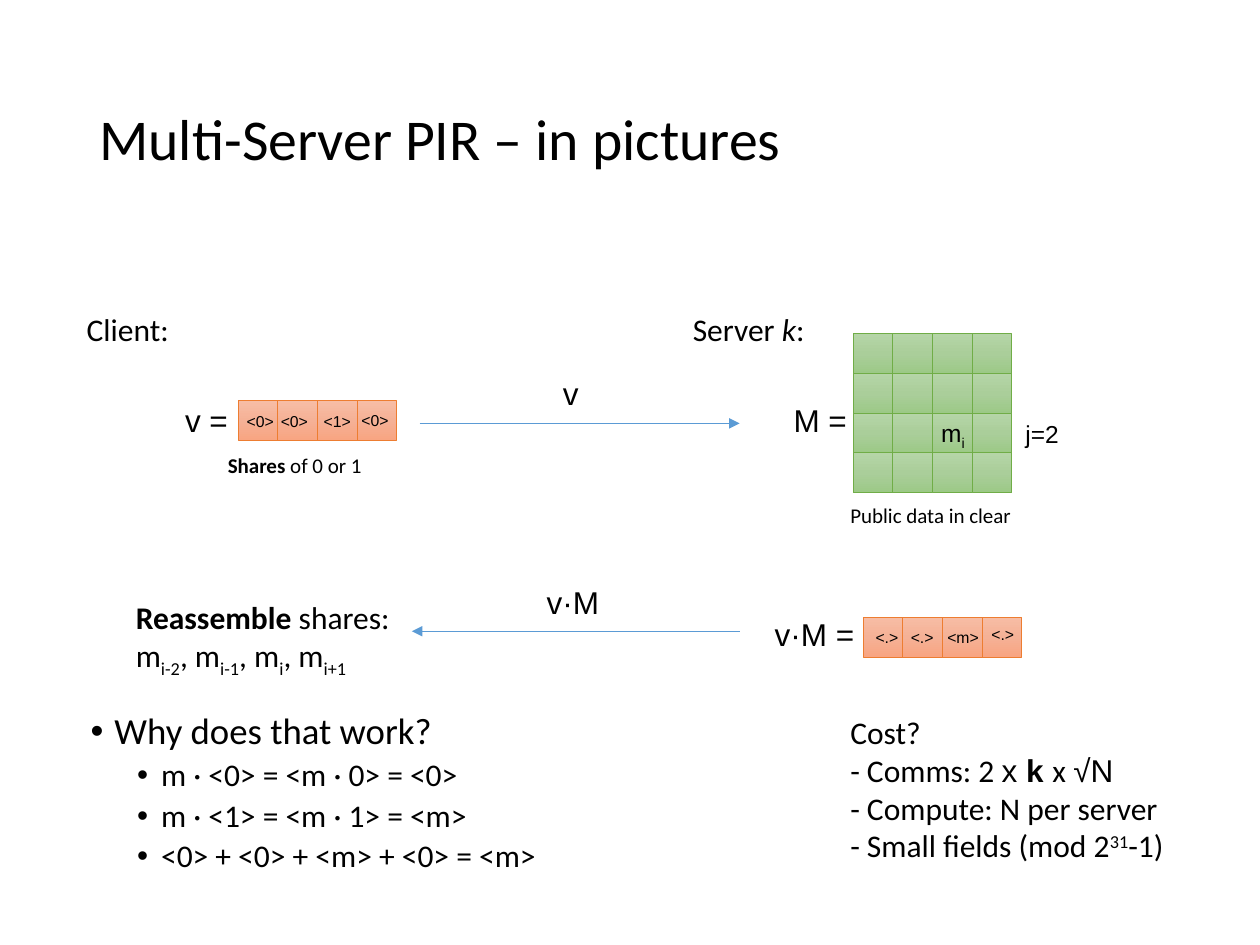
from copy import deepcopy
from dataclasses import dataclass

from pptx import Presentation
from pptx.dml.color import RGBColor
from pptx.enum.shapes import MSO_CONNECTOR as Connector, MSO_SHAPE as Shape
from pptx.enum.text import MSO_ANCHOR as Anchor, MSO_AUTO_SIZE as AutoSize
from pptx.oxml.ns import qn
from pptx.oxml.xmlchemy import OxmlElement as Element
from pptx.util import Inches, Pt


@dataclass(frozen=True)
class Theme:
    text: str = "000000"
    arrow: str = "5B9BD5"
    green: tuple = ("B5D5A7", "AACE9A", "9CC987")
    green_line: str = "70AD47"
    orange: tuple = ("F7BDA5", "F5B196", "F8A582")
    orange_line: str = "ED7D31"
    body_font: str = "Calibri"
    math_font: str = "Arial"
    title: float = 33
    heading: float = 21
    normal: float = 18
    entry: float = 14
    caption: float = 12
    share: float = 9
    line: float = 0.5
    cell: float = 0.315


SUB, SUPER = {"baseline": -25}, {"baseline": 30}
BOLD, ITALIC = {"bold": True}, {"italic": True}


class SlideBuilder:
    def __init__(self, page, theme):
        self.page = page
        self.theme = theme

    def style(self, span, size, font, bold=None, italic=None, baseline=None):
        span.font.size = Pt(size)
        span.font.name = font
        span.font.color.rgb = RGBColor.from_string(self.theme.text)
        span.font.bold = bold
        span.font.italic = italic
        if baseline:
            span.font._element.set("baseline", str(baseline * 1000))

    def text(self, left, top, width, height, lines, size=None, font=None,
             wrap=False, grow=True):
        """Each line is a string or a list of strings and (string, style) pairs."""
        box = self.page.shapes.add_textbox(
            Inches(left), Inches(top), Inches(width), Inches(height))
        frame = box.text_frame
        frame.word_wrap = wrap
        frame.auto_size = AutoSize.SHAPE_TO_FIT_TEXT if grow else AutoSize.NONE
        for number, line in enumerate(lines):
            para = frame.add_paragraph() if number else frame.paragraphs[0]
            for part in [line] if isinstance(line, str) else line:
                words, extra = (part, {}) if isinstance(part, str) else part
                span = para.add_run()
                span.text = words
                base = {"size": size or self.theme.normal,
                        "font": font or self.theme.body_font}
                self.style(span, **{**base, **extra})
        return frame

    def math(self, left, top, width, words, size=None, height=0.4):
        self.text(left, top, width, height, [words], size, self.theme.math_font)

    def title(self, left, top, width, height, words):
        frame = self.text(left, top, width, height, [words], self.theme.title,
                          wrap=True, grow=False)
        frame.vertical_anchor = Anchor.MIDDLE
        frame.paragraphs[0].line_spacing = 0.9

    def bullets(self, left, top, width, height, heading, points):
        lines = [[(heading, {"size": self.theme.heading})], *points]
        frame = self.text(left, top, width, height, lines, wrap=True, grow=False)
        for number, para in enumerate(frame.paragraphs):
            props = para._p.get_or_add_pPr()
            props.set("marL", str(Inches(0.56 if number else 0.19)))
            props.set("indent", str(Inches(-0.19)))
            face = Element("a:buFont")
            face.set("typeface", self.theme.math_font)
            mark = Element("a:buChar")
            mark.set("char", "•")
            props.extend([face, mark])
            para.line_spacing = 0.9
            if number:
                para.level = 1
                para.space_before = Pt(3.8)

    def cell(self, left, top, colors, line):
        side = Inches(self.theme.cell)
        shape = self.page.shapes.add_shape(
            Shape.RECTANGLE, Inches(left), Inches(top), side, side)
        shape.shadow.inherit = False
        shape.fill.gradient()
        shape.fill.gradient_angle = 270
        stop_list = shape._element.spPr.find(".//" + qn("a:gsLst"))
        stop_list.insert(1, deepcopy(stop_list[0]))
        for number, stop in enumerate(shape.fill.gradient_stops):
            stop.position = number / 2
            stop.color.rgb = RGBColor.from_string(colors[number])
        shape.line.color.rgb = RGBColor.from_string(line)
        shape.line.width = Pt(self.theme.line)

    def grid(self, left, top, rows, columns, colors, line):
        for row in range(rows):
            for column in range(columns):
                self.cell(left + column * self.theme.cell,
                          top + row * self.theme.cell, colors, line)

    def shares(self, left, top, labels):
        """Draw a row of share cells; each label is (words, left, top, width)."""
        self.grid(left, top, 1, len(labels), self.theme.orange,
                  self.theme.orange_line)
        for words, label_left, label_top, width in labels:
            self.text(label_left, label_top, width, 0.25, [words],
                      self.theme.share, self.theme.math_font, wrap=True)

    def arrow(self, start, end, top):
        line = self.page.shapes.add_connector(
            Connector.STRAIGHT, Inches(start), Inches(top), Inches(end), Inches(top))
        line.line.color.rgb = RGBColor.from_string(self.theme.arrow)
        line.line.width = Pt(self.theme.line)
        head = Element("a:tailEnd")
        head.set("type", "triangle")
        line.line._get_or_add_ln().append(head)
        line._element.spPr.append(Element("a:effectLst"))


def main():
    deck = Presentation()
    deck.slide_width, deck.slide_height = Inches(10), Inches(7.5)
    theme = Theme()
    page = SlideBuilder(deck.slides.add_slide(deck.slide_layouts[6]), theme)
    arial = {"font": theme.math_font}

    # Title and explanation
    page.title(0.69, 0.4, 8.62, 1.45, "Multi-Server PIR – in pictures")
    page.bullets(0.62, 5.61, 8.62, 1.6, "Why does that work?", [
        "m · <0> = <m · 0> = <0>",
        "m · <1> = <m · 1> = <m>",
        "<0> + <0> + <m> + <0> = <m>",
    ])

    # Client query
    page.text(0.59, 2.41, 0.86, 0.4, ["Client:"])
    page.math(1.37, 3.13, 0.62, "v =")
    page.shares(1.89, 3.18, [
        ("<0>", 1.86, 3.22, 0.42), ("<0>", 2.13, 3.22, 0.42),
        ("<1>", 2.47, 3.22, 0.42), ("<0>", 2.77, 3.21, 0.42),
    ])
    page.text(1.71, 3.54, 1.27, 0.3, [[("Shares", BOLD), " of 0 or 1"]],
              theme.caption)

    # Server matrix
    page.text(5.4, 2.41, 1.1, 0.4, [["Server ", ("k", ITALIC), ":"]])
    page.math(6.2, 3.13, 0.7, "M =")
    page.grid(6.77, 2.65, 4, 4, theme.green, theme.green_line)
    page.math(7.37, 3.27, 0.41, ["m", ("i", SUB)], theme.entry, 0.34)
    page.math(8.04, 3.28, 0.47, "j=2", theme.entry, 0.34)
    page.text(6.65, 3.94, 1.49, 0.3, ["Public data in clear"], theme.caption)

    # Messages between client and server
    page.arrow(3.33, 5.87, 3.36)
    page.math(4.37, 2.92, 0.33, "v")
    page.arrow(5.87, 3.27, 5.01)
    page.math(4.24, 4.58, 0.69, "v·M")

    # Server answer
    page.math(6.05, 4.83, 0.91, "v·M =")
    page.shares(6.85, 4.9, [
        ("<.>", 6.85, 4.93, 0.42), ("<.>", 7.13, 4.93, 0.42),
        ("<m>", 7.42, 4.93, 0.5), ("<.>", 7.77, 4.91, 0.42),
    ])

    # Client result
    page.text(0.98, 4.7, 2.27, 0.71, [
        [("Reassemble", BOLD), " shares:"],
        ["m", ("i-2", SUB), ", m", ("i-1", SUB), ", m", ("i", SUB),
         ", m", ("i+1", SUB)],
    ])

    # Cost
    page.text(6.65, 5.61, 2.73, 1.31, [
        "Cost?",
        ["- Comms: 2 ", ("x ", arial), ("k ", {**arial, **BOLD}), "x ",
         ("√N", arial)],
        "- Compute: N per server",
        ["- Small fields (mod 2", ("31", SUPER), "-1)"],
    ])

    deck.save("out.pptx")


if __name__ == "__main__":
    main()
